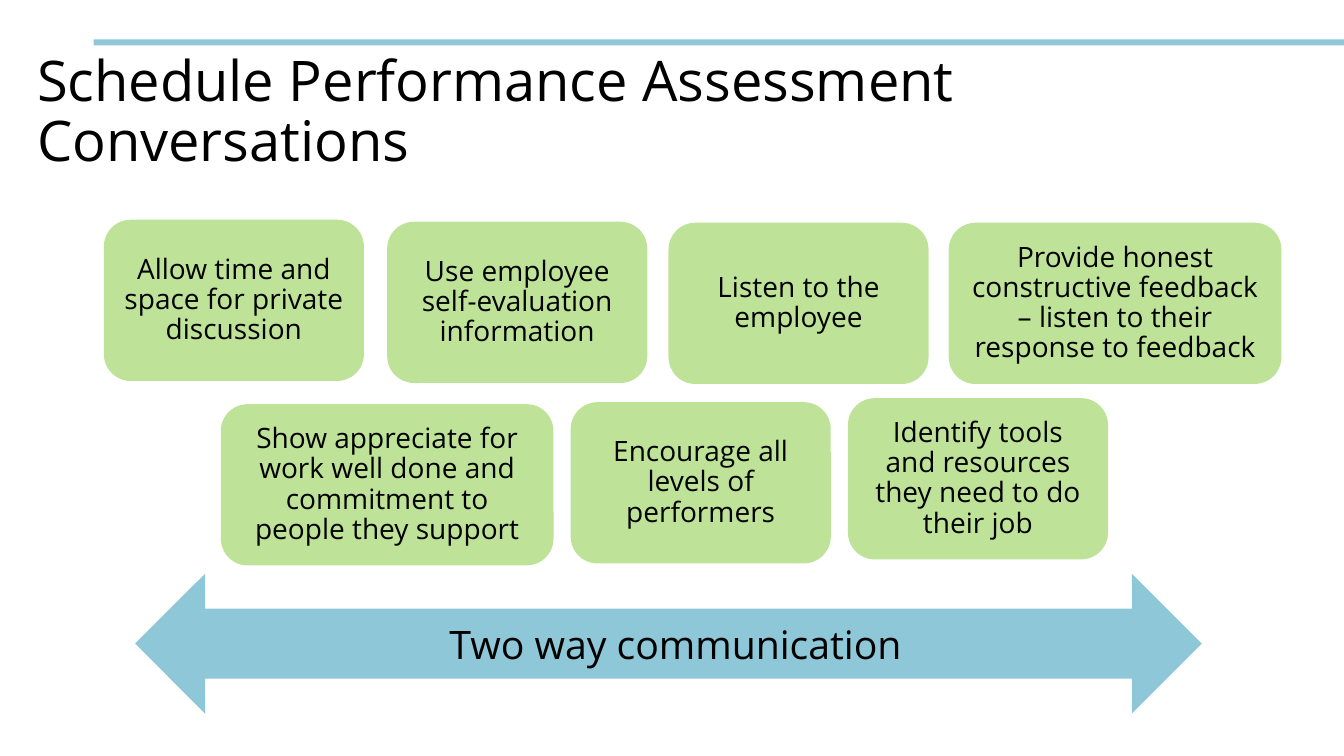
import lxml.etree
import pptx
import pptx.dml.color
import pptx.enum.shapes
import pptx.enum.text
import pptx.oxml.ns
import pptx.util

Inches = pptx.util.Inches
Shapes = pptx.enum.shapes.MSO_SHAPE
Anchor = pptx.enum.text.MSO_ANCHOR
Align = pptx.enum.text.PP_ALIGN

TITLE = "Schedule Performance Assessment Conversations"
MESSAGE = "Two way communication"
NARROW, WIDE, TIP_HEIGHT = 2.58, 3.3, 1.6
TIPS = [
    ("Allow time and space for private discussion", 1.03, 2.18, NARROW),
    ("Use employee self-evaluation information", 3.84, 2.2, NARROW),
    ("Listen to the employee", 6.63, 2.21, NARROW),
    ("Provide honest constructive feedback – listen to their response to feedback", 9.41, 2.21, WIDE),
    ("Show appreciate for work well done and commitment to people they support", 2.19, 4.01, WIDE),
    ("Encourage all levels of performers", 5.66, 3.99, NARROW),
    ("Identify tools and resources they need to do their job", 8.41, 3.95, NARROW),
]
THEME = {
    "font": "Open Sans",
    "ink": "000000",
    "blue": "8EC7D7",
    "green": "92D050",
    "green_opacity": 59,
    "title_size": 40,
    "tip_size": 20,
    "message_size": 28,
}
TITLE_FRAME = {"word_wrap": True, "vertical_anchor": Anchor.MIDDLE}
TIP_FRAME = {
    "word_wrap": True,
    "vertical_anchor": Anchor.MIDDLE,
    "margin_left": Inches(0.12),
    "margin_right": Inches(0.12),
}
MESSAGE_FRAME = {"word_wrap": False, "auto_size": pptx.enum.text.MSO_AUTO_SIZE.SHAPE_TO_FIT_TEXT}
TITLE_PARAGRAPH = {"alignment": Align.LEFT, "line_spacing": 0.9}
TIP_PARAGRAPH = {"alignment": Align.CENTER, "line_spacing": 0.9}
MESSAGE_PARAGRAPH = {"alignment": Align.LEFT}


def apply(target, values):
    for name, value in values.items():
        setattr(target, name, value)


def draw(slide, preset, place, colour, opacity=100):
    shape = slide.shapes.add_shape(preset, *map(Inches, place))
    shape.shadow.inherit = False
    shape.line.fill.background()
    shape.fill.solid()
    shape.fill.fore_color.rgb = pptx.dml.color.RGBColor.from_string(colour)
    if opacity < 100:
        qn = pptx.oxml.ns.qn
        tint = shape.fill._xPr.find(qn("a:solidFill")).find(qn("a:srgbClr"))
        lxml.etree.SubElement(tint, qn("a:alpha")).set("val", str(opacity * 1000))
    return shape


def write(shape, words, size, frame, paragraph):
    apply(shape.text_frame, frame)
    line = shape.text_frame.paragraphs[0]
    apply(line, paragraph)
    run = line.add_run()
    run.text = words
    apply(run.font, {"name": THEME["font"], "size": pptx.util.Pt(size)})
    run.font.color.rgb = pptx.dml.color.RGBColor.from_string(THEME["ink"])


def main():
    deck = pptx.Presentation()
    apply(deck, {"slide_width": Inches(13.33), "slide_height": Inches(7.5)})
    slide = deck.slides.add_slide(deck.slide_layouts[6])

    draw(slide, Shapes.RECTANGLE, (0.93, 0.39, 12.4, 0.06), THEME["blue"])
    title = slide.shapes.add_textbox(*map(Inches, (0.27, 0.4, 12.98, 1.45)))
    write(title, TITLE, THEME["title_size"], TITLE_FRAME, TITLE_PARAGRAPH)

    draw(slide, Shapes.LEFT_RIGHT_ARROW, (1.34, 5.69, 10.58, 1.39), THEME["blue"])
    for words, left, top, width in TIPS:
        place = (left, top, width, TIP_HEIGHT)
        tip = draw(slide, Shapes.ROUNDED_RECTANGLE, place, THEME["green"], THEME["green_opacity"])
        write(tip, words, THEME["tip_size"], TIP_FRAME, TIP_PARAGRAPH)

    message = slide.shapes.add_textbox(*map(Inches, (4.36, 6.1, 4.76, 0.57)))
    write(message, MESSAGE, THEME["message_size"], MESSAGE_FRAME, MESSAGE_PARAGRAPH)

    deck.save("out.pptx")


if __name__ == "__main__":
    main()
